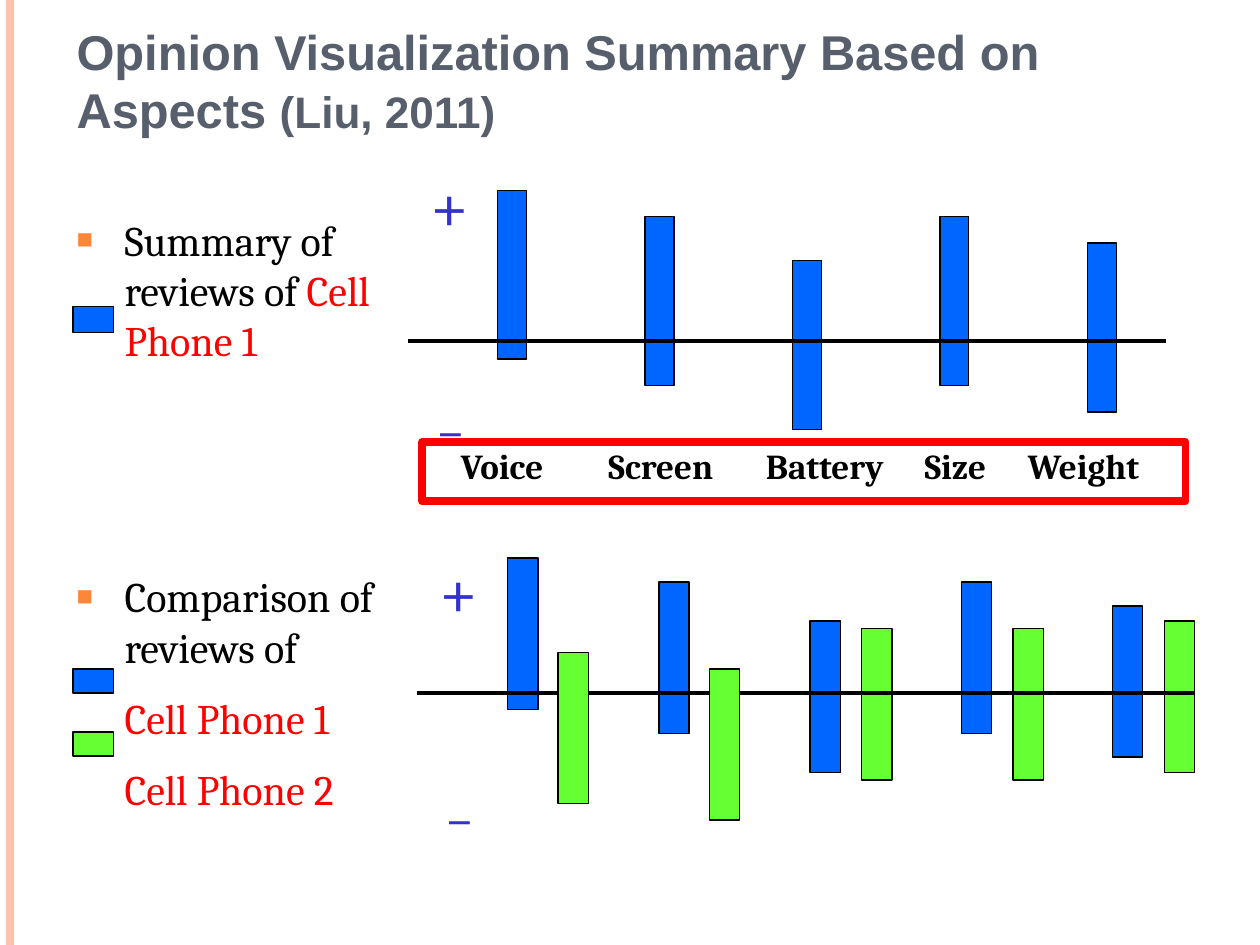
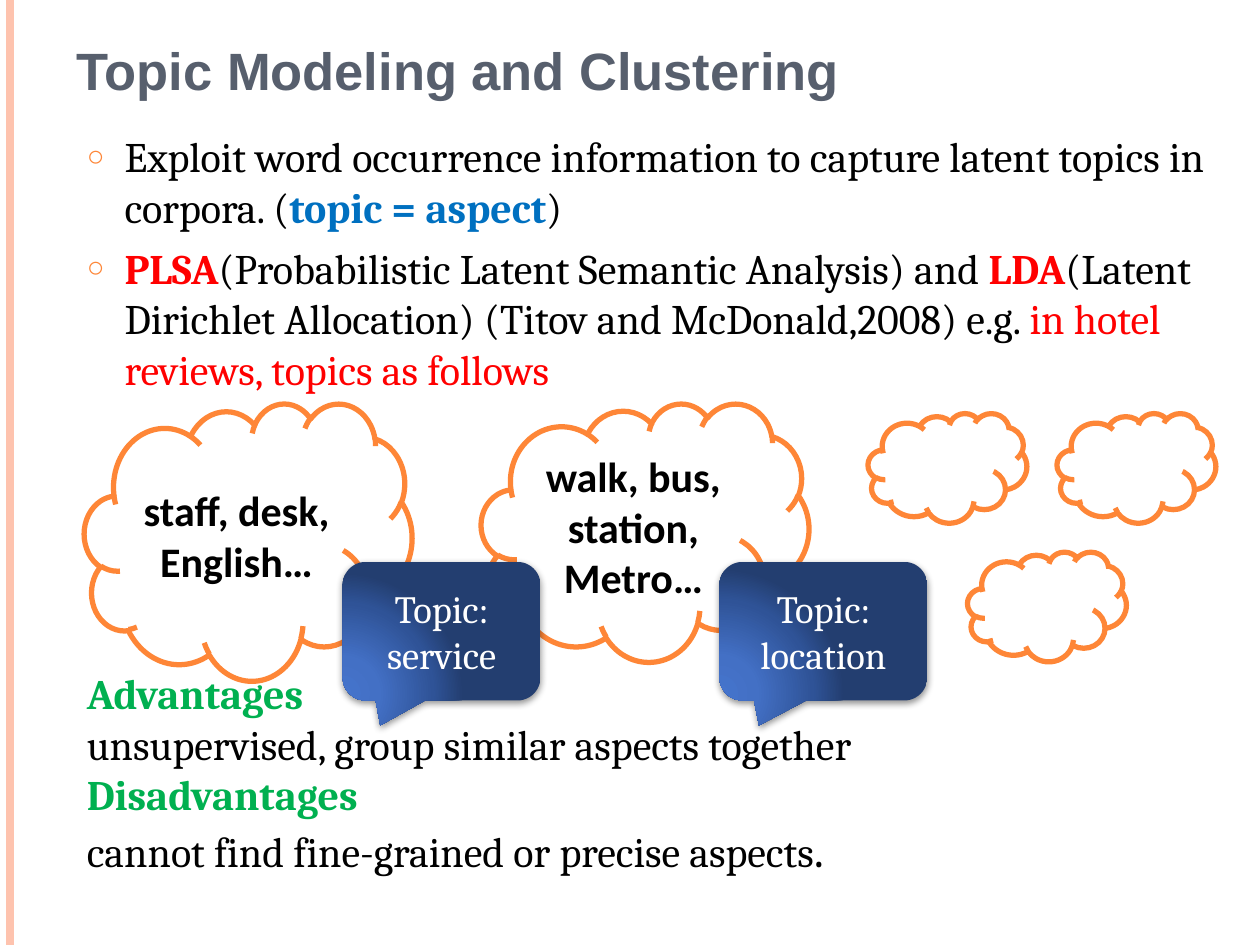
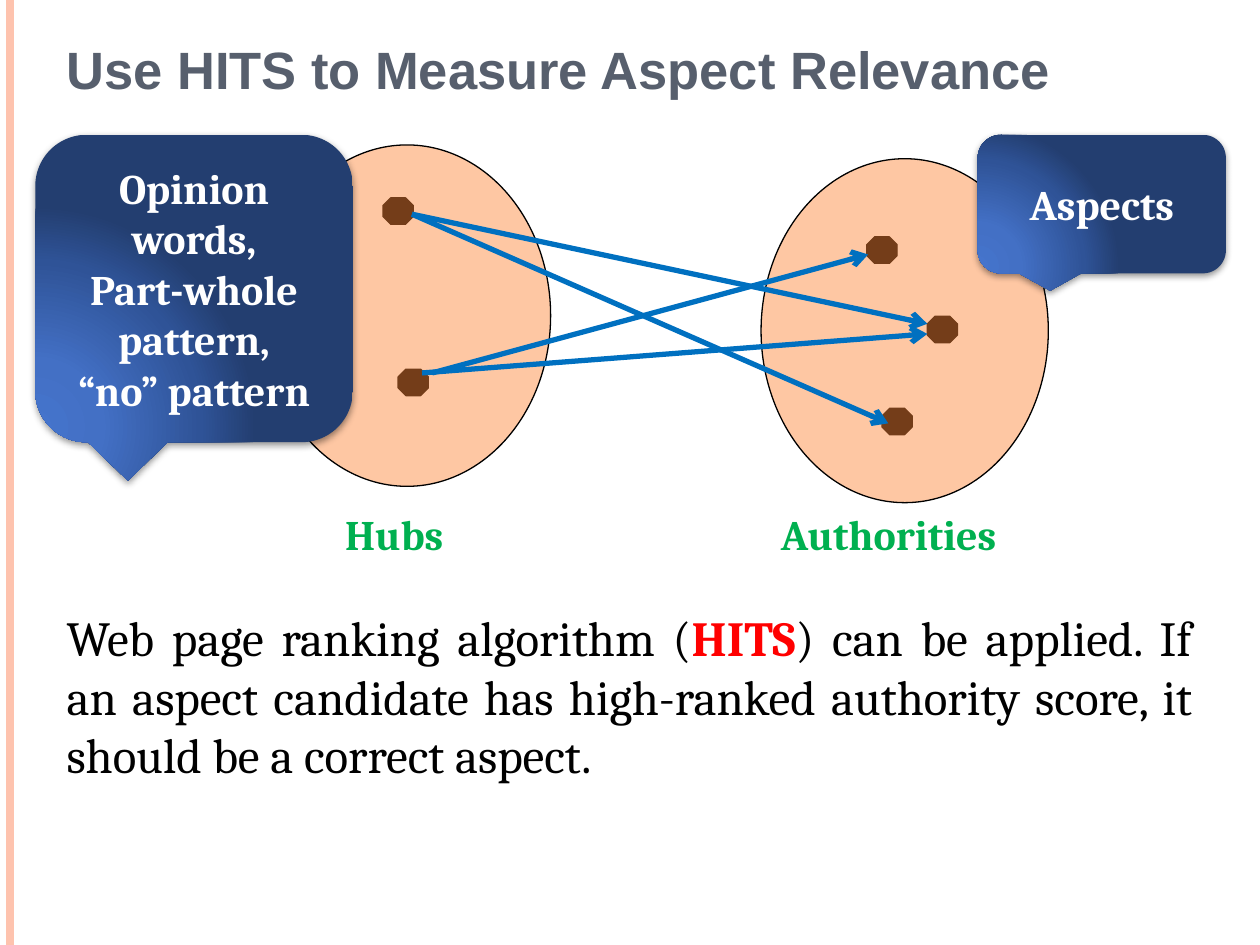
from dataclasses import dataclass
from typing import Optional

from lxml import etree
from pptx import Presentation
from pptx.dml.color import RGBColor
from pptx.enum.shapes import MSO_CONNECTOR, MSO_SHAPE
from pptx.enum.text import MSO_ANCHOR, PP_ALIGN
from pptx.oxml import parse_xml
from pptx.oxml.ns import qn
from pptx.util import Emu, Pt

PX = 9144
DRAWING_NS = "http://schemas.openxmlformats.org/drawingml/2006/main"
STRAIGHT = MSO_CONNECTOR.STRAIGHT
RECTANGLE = MSO_SHAPE.RECTANGLE
CLOUD = MSO_SHAPE.CLOUD
OVAL = MSO_SHAPE.OVAL
OCTAGON = MSO_SHAPE.OCTAGON
CALLOUT = MSO_SHAPE.ROUNDED_RECTANGULAR_CALLOUT
TOP, MIDDLE, BOTTOM = MSO_ANCHOR.TOP, MSO_ANCHOR.MIDDLE, MSO_ANCHOR.BOTTOM
LEFT, CENTER, JUSTIFY = PP_ALIGN.LEFT, PP_ALIGN.CENTER, PP_ALIGN.JUSTIFY


@dataclass(frozen=True)
class Theme:
    heading_font: str = "Arial"
    body_font: str = "Cambria"
    cloud_font: str = "Calibri"
    stripe: str = "FEC3AE"
    heading: str = "575F6D"
    black: str = "000000"
    white: str = "FFFFFF"
    orange: str = "FE8637"
    red: str = "FF0000"
    green: str = "00B050"
    blue: str = "0070C0"
    sign: str = "3333CC"
    phone_1: str = "0066FF"
    phone_2: str = "66FF33"
    callout_stops: tuple = ((0, "4574CC"), (30, "4370C5"), (75, "2F5397"), (100, "233E70"))
    title_size: float = 30
    long_title_size: float = 27.9
    citation_size: float = 25.2
    statement_size: float = 28
    body_size: float = 24
    topic_size: float = 22
    aspect_size: float = 20
    plus_size: float = 40
    minus_size: float = 32


THEME = Theme()


@dataclass
class Span:
    text: str
    color: Optional[str] = None
    bold: Optional[bool] = None
    size: Optional[float] = None


@dataclass
class Para:
    spans: list
    color: str = THEME.black
    bold: bool = False
    bullet: Optional[tuple] = None
    indent: int = 0


def px(length):
    return Emu(length * PX)


def box(*lengths):
    return [px(length) for length in lengths]


def rgb(color):
    return RGBColor.from_string(color)


def add_bullet(paragraph, bullet):
    symbol, percent = bullet
    properties = paragraph._p.get_or_add_pPr()
    color = etree.SubElement(properties, qn("a:buClr"))
    etree.SubElement(color, qn("a:srgbClr"), val=THEME.orange)
    etree.SubElement(properties, qn("a:buSzPct"), val=str(percent * 1000))
    etree.SubElement(properties, qn("a:buFont"), typeface=THEME.heading_font)
    etree.SubElement(properties, qn("a:buChar"), char=symbol)


def write(frame, paras, size, font=THEME.body_font, align=LEFT, anchor=TOP, space=0):
    frame.word_wrap = True
    frame.vertical_anchor = anchor
    for index, para in enumerate(paras):
        paragraph = frame.paragraphs[0] if index == 0 else frame.add_paragraph()
        paragraph.alignment = align
        if index and space:
            paragraph.space_before = Pt(space)
        if para.indent:
            properties = paragraph._p.get_or_add_pPr()
            properties.set("marL", str(px(para.indent)))
            properties.set("indent", str(-px(para.indent) if para.bullet else 0))
        if para.bullet:
            add_bullet(paragraph, para.bullet)
        paragraph.font.name = font
        paragraph.font.size = Pt(size)
        paragraph.font.bold = para.bold
        paragraph.font.color.rgb = rgb(para.color)
        for span in para.spans:
            run = paragraph.add_run()
            run.text = span.text
            if span.color:
                run.font.color.rgb = rgb(span.color)
            if span.bold is not None:
                run.font.bold = span.bold
            if span.size:
                run.font.size = Pt(span.size)


def line(text, color=THEME.black, bold=False):
    return Para([Span(text)], color, bold)


def add_text(slide, place, paras, size, **style):
    write(slide.shapes.add_textbox(*box(*place)).text_frame, paras, size, **style)


def add_outlined(slide, kind, place, fill, outline, weight):
    shape = slide.shapes.add_shape(kind, *box(*place))
    shape.shadow.inherit = False
    if fill:
        shape.fill.solid()
        shape.fill.fore_color.rgb = rgb(fill)
    else:
        shape.fill.background()
    shape.line.color.rgb = rgb(outline)
    shape.line.width = Pt(weight)
    return shape


def add_line(slide, start, end, color, weight, arrow=False):
    connector = slide.shapes.add_connector(STRAIGHT, *box(*start, *end))
    connector.line.color.rgb = rgb(color)
    connector.line.width = Pt(weight)
    if arrow:
        etree.SubElement(connector.line._get_or_add_ln(), qn("a:tailEnd"), type="arrow")
    etree.SubElement(connector._element.spPr, qn("a:effectLst"))


def add_slide(deck, title_place, title, size=THEME.title_size):
    slide = deck.slides.add_slide(deck.slide_layouts[6])
    add_line(slide, (8, 0), (8, 750), THEME.stripe, 4.5)
    add_text(slide, title_place, [Para(title, THEME.heading, True)], size,
             font=THEME.heading_font, anchor=BOTTOM)
    return slide


def add_bars(slide, left, step, tops, size, color):
    for index, top in enumerate(tops):
        add_outlined(slide, RECTANGLE, (left + index * step, top, *size), color, THEME.black, 0.75)


def add_swatch(slide, top, height, color):
    add_outlined(slide, RECTANGLE, (58, top, 32, height), color, THEME.black, 0.75)


def add_signs(slide, plus, minus):
    add_text(slide, (*plus, 70, 60), [line("+", THEME.sign)], THEME.plus_size)
    add_text(slide, (*minus, 70, 50), [line("_", THEME.sign)], THEME.minus_size)


def add_cloud(slide, place, words=()):
    cloud = add_outlined(slide, CLOUD, place, THEME.white, THEME.orange, 3)
    if words:
        write(cloud.text_frame, [line(text, bold=True) for text in words],
              THEME.body_size, font=THEME.cloud_font, align=CENTER, anchor=MIDDLE)


def add_callout(slide, place, texts, size, bold=False, tip=None):
    callout = slide.shapes.add_shape(CALLOUT, *box(*place))
    if tip:
        callout.adjustments[0], callout.adjustments[1] = tip
    callout.line.fill.background()
    callout.fill.background()
    stops = "".join(f'<a:gs pos="{at * 1000}"><a:srgbClr val="{color}"/></a:gs>'
                    for at, color in THEME.callout_stops)
    gradient = parse_xml(
        f'<a:gradFill xmlns:a="{DRAWING_NS}" rotWithShape="1"><a:gsLst>{stops}</a:gsLst>'
        '<a:path path="circle"><a:fillToRect l="5000" t="100000" r="120000" b="10000"/>'
        '</a:path></a:gradFill>')
    properties = callout._element.spPr
    properties.replace(properties.find(qn("a:noFill")), gradient)
    callout.shadow.inherit = False
    shadow = etree.SubElement(properties.find(qn("a:effectLst")), qn("a:outerShdw"),
                              blurRad=str(Pt(4)), dist=str(Pt(1.6)), dir="5400000",
                              algn="ctr", rotWithShape="0")
    shade = etree.SubElement(shadow, qn("a:srgbClr"), val=THEME.black)
    etree.SubElement(shade, qn("a:alpha"), val="42000")
    write(callout.text_frame, [line(text, THEME.white, bold) for text in texts],
          size, align=CENTER, anchor=MIDDLE)


def add_node_set(slide, place, nodes):
    for left, top in nodes:
        add_outlined(slide, OCTAGON, (left, top, 24, 21), THEME.black, THEME.black, 0.75)
    circle = add_outlined(slide, OVAL, place, THEME.orange, THEME.black, 0.75)
    tint = circle._element.spPr.find(qn("a:solidFill"))[0]
    etree.SubElement(tint, qn("a:alpha"), val="46000")


def build_opinion_summary(deck):
    slide = add_slide(deck, (51, 44, 882, 71), [
        Span("Opinion Visualization Summary Based on Aspects "),
        Span("(Liu, 2011)", size=THEME.citation_size),
    ], THEME.long_title_size)
    square = ("■", 65)

    add_bars(slide, 395, 117, (151, 172, 207, 172, 193), (23, 134), THEME.phone_1)
    add_line(slide, (324, 271), (925, 271), THEME.black, 2.25)
    add_text(slide, (51, 165, 281, 111), [
        Para([Span("Summary of reviews of "), Span("Cell Phone 1", THEME.red)],
             bullet=square, indent=38),
    ], THEME.body_size)
    aspects = {"Voice": 356, "Screen": 473, "Battery": 598, "Size": 724, "Weight": 806}
    for aspect, left in aspects.items():
        add_text(slide, (left, 348, 130, 42), [line(aspect, bold=True)], THEME.aspect_size)
    add_signs(slide, (332, 123), (340, 292))
    add_swatch(slide, 243, 21, THEME.phone_1)
    add_outlined(slide, RECTANGLE, (335, 351, 606, 47), None, THEME.red, 4.5)

    add_text(slide, (51, 448, 305, 160), [
        Para([Span("Comparison of reviews of")], bullet=square, indent=38),
        Para([Span("Cell Phone 1")], THEME.red, indent=38),
        Para([Span("Cell Phone 2")], THEME.red, indent=38),
    ], THEME.body_size, space=12)
    add_swatch(slide, 531, 19, THEME.phone_1)
    add_swatch(slide, 581, 19, THEME.phone_2)
    bar, step = (24, 120), 120
    add_bars(slide, 443 + 2 * step + 1, step, (499, 499, 493), bar, THEME.phone_2)
    add_bars(slide, 403, step, (443, 462, 493, 462, 481), bar, THEME.phone_1)
    add_line(slide, (331, 550), (948, 550), THEME.black, 2.25)
    add_bars(slide, 443, step, (518, 531), bar, THEME.phone_2)
    add_signs(slide, (339, 430), (347, 600))


def build_topic_modeling(deck):
    slide = add_slide(deck, (51, 0, 817, 85), [Span("Topic Modeling and Clustering")])
    ring = ("○", 70)
    add_text(slide, (59, 99, 929, 533), [
        Para([
            Span("Exploit word occurrence information to capture latent topics in corpora. ("),
            Span("topic = aspect", THEME.blue, True),
            Span(")"),
        ], bullet=ring, indent=30),
        Para([
            Span("PLSA", THEME.red, True),
            Span("(Probabilistic Latent Semantic Analysis) and "),
            Span("LDA", THEME.red, True),
            Span("(Latent Dirichlet Allocation) (Titov and McDonald,2008) e.g. "),
            Span("in hotel reviews, topics as follows", THEME.red),
        ], bullet=ring, indent=30),
    ], THEME.body_size, space=6)

    add_cloud(slide, (382, 320, 260, 205), ("walk, bus,", "station,", "Metro…"))
    add_cloud(slide, (67, 320, 260, 220), ("staff, desk,", "English…"))
    for left, top in ((689, 328), (768, 438), (839, 328)):
        add_cloud(slide, (left, top, 126, 87))
    for topic, left, width in (("service", 272, 157), ("location", 571, 165)):
        add_callout(slide, (left, 446, width, 110), [f"Topic: {topic}"],
                    THEME.topic_size, tip=(-0.31, 0.68))

    add_text(slide, (59, 525, 835, 190), [
        line("Advantages", THEME.green, True),
        line("unsupervised, group similar aspects together"),
        line("Disadvantages", THEME.green, True),
        Para([Span("cannot find fine-grained or precise aspects"),
              Span(".", size=THEME.statement_size)]),
    ], THEME.body_size)


def build_hits_relevance(deck):
    slide = add_slide(deck, (43, 13, 817, 71), [Span("Use HITS to Measure Aspect Relevance")])
    add_node_set(slide, (209, 115, 228, 271), ((316, 293), (304, 157)))
    add_node_set(slide, (604, 126, 228, 273), ((736, 251), (700, 324), (688, 188)))
    add_callout(slide, (776, 107, 197, 110), ["Aspects"], THEME.body_size, bold=True)
    add_callout(slide, (28, 107, 252, 244),
                ["Opinion words,", "Part-whole pattern,", "“no” pattern"],
                THEME.body_size, bold=True)
    add_text(slide, (43, 477, 913, 151), [
        Para([
            Span("Web page ranking algorithm ("),
            Span("HITS", THEME.red, True),
            Span(") can be applied. If an aspect candidate has high-ranked "
                 "authority score, it should be a correct aspect."),
        ]),
    ], THEME.statement_size, align=JUSTIFY)
    links = (
        ((327, 170), (705, 336)),
        ((327, 170), (736, 257)),
        ((343, 296), (689, 202)),
        ((335, 296), (736, 265)),
    )
    for hub, authority in links:
        add_line(slide, hub, authority, THEME.blue, 3, arrow=True)
    for role, left, width in (("Hubs", 264, 118), ("Authorities", 610, 220)):
        add_text(slide, (left, 399, width, 50), [line(role, THEME.green, True)], THEME.body_size)


def main():
    deck = Presentation()
    deck.slide_width, deck.slide_height = box(1000, 750)
    build_opinion_summary(deck)
    build_topic_modeling(deck)
    build_hits_relevance(deck)
    deck.save("out.pptx")


if __name__ == "__main__":
    main()
